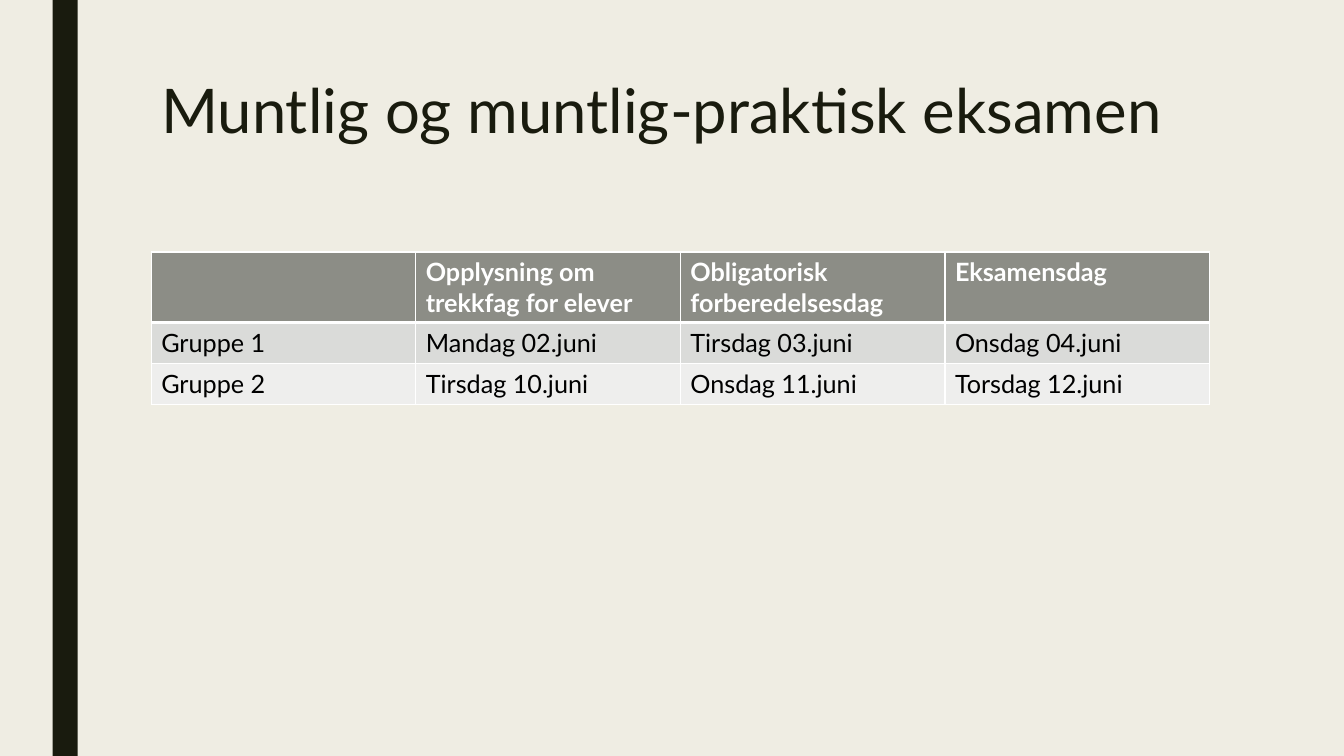
"""Build the slide with the dates of the oral exams."""
from lxml.etree import SubElement
from pptx import Presentation
from pptx.dml.color import RGBColor
from pptx.enum.shapes import MSO_SHAPE as SHAPE
from pptx.oxml.ns import qn
from pptx.util import Pt

PX = 9525
COLORS = {"back": "EFEDE3", "dark": "191B0E", "head": "8C8D86", "odd": "DADBD9",
          "even": "EEEEED", "white": "FFFFFF", "black": "000000"}


def rgb(name):
    return RGBColor.from_string(COLORS[name])


def put_text(tf, text, size=18, color="black", bold=False, spacing=None):
    tf.word_wrap = True
    p = tf.paragraphs[0]
    p.line_spacing = spacing
    r = p.add_run()
    r.text = text
    r.font.name = "Lato"
    r.font.size = Pt(size)
    r.font.bold = bold
    r.font.color.rgb = rgb(color)


prs = Presentation()
prs.slide_width, prs.slide_height = 1280 * PX, 720 * PX
s = prs.slides.add_slide(prs.slide_layouts[6])
s.background.fill.solid()
s.background.fill.fore_color.rgb = rgb("back")

bar = s.shapes.add_shape(SHAPE.RECTANGLE, 50 * PX, 0, 24 * PX, 720 * PX)
bar.shadow.inherit = False
bar.fill.solid()
bar.fill.fore_color.rgb = rgb("dark")
bar.line.fill.background()

title = s.shapes.add_textbox(144 * PX, 72 * PX, 1008 * PX, 156 * PX)
put_text(title.text_frame, "Muntlig og muntlig-praktisk eksamen",
         size=44, color="dark", spacing=0.89)

rows = [
    ["", "Opplysning om trekkfag for elever", "Obligatorisk forberedelsesdag", "Eksamensdag"],
    ["Gruppe 1", "Mandag 02.juni", "Tirsdag 03.juni", "Onsdag 04.juni"],
    ["Gruppe 2", "Tirsdag 10.juni", "Onsdag 11.juni", "Torsdag 12.juni"],
]
heights = [67, 39, 39]
fills = ["head", "odd", "even"]
table = s.shapes.add_table(3, 4, 144 * PX, 240 * PX, 1008 * PX, sum(heights) * PX).table
for i, row in enumerate(rows):
    table.rows[i].height = heights[i] * PX
    for j, text in enumerate(row):
        cell = table.cell(i, j)
        tcPr = cell._tc.get_or_add_tcPr()
        for side in "LRTB":
            thick = (i, side) in [(0, "B"), (1, "T")]
            ln = SubElement(tcPr, qn(f"a:ln{side}"), w=str(Pt(3 if thick else 1)))
            fill = SubElement(ln, qn("a:solidFill"))
            SubElement(fill, qn("a:srgbClr"), val=COLORS["white"])
        cell.fill.solid()
        cell.fill.fore_color.rgb = rgb(fills[i])
        if text:
            put_text(cell.text_frame, text, color="black" if i else "white", bold=i == 0)

prs.save("out.pptx")
